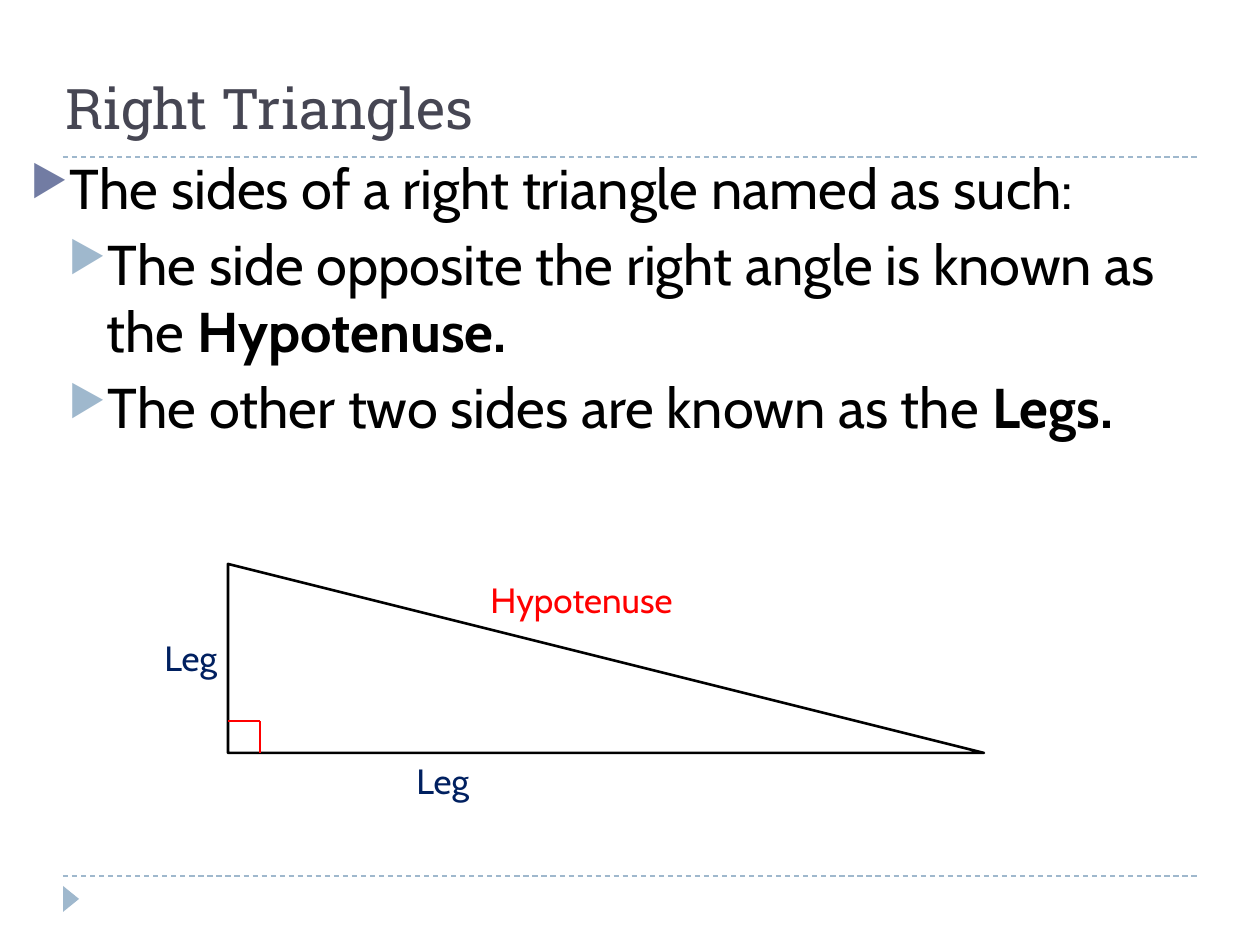
from lxml.etree import SubElement
from pptx import Presentation
from pptx.dml.color import RGBColor
from pptx.enum.dml import MSO_LINE
from pptx.enum.shapes import MSO_CONNECTOR, MSO_SHAPE
from pptx.enum.text import MSO_ANCHOR
from pptx.oxml.ns import qn
from pptx.util import Emu, Pt

PX = 914400 // 126
COLORS = {
    "title": "464653",
    "text": "000000",
    "main_bullet": "727CA3",
    "accent": "9FB8CD",
    "paper": "FFFFFF",
    "highlight": "FF0000",
    "leg": "002060",
}


def px(*lengths):
    return [Emu(length * PX) for length in lengths]


def rgb(name):
    return RGBColor.from_string(COLORS[name])


class SlideBuilder:
    def __init__(self, slide, heading_font, body_font):
        self.shapes = slide.shapes
        self.heading_font = heading_font
        self.body_font = body_font

    def line(self, start, end, color, dash=None):
        connector = self.shapes.add_connector(
            MSO_CONNECTOR.STRAIGHT, *px(*start, *end))
        connector.line.color.rgb = rgb(color)
        connector.line.width = Pt(0.75)
        if dash:
            connector.line.dash_style = dash
        SubElement(connector._element.spPr, qn("a:effectLst"))

    def shape(self, kind, box, fill, outline=None, rotation=0):
        shape = self.shapes.add_shape(kind, *px(*box))
        shape.shadow.inherit = False
        shape.rotation = rotation
        shape.fill.solid()
        shape.fill.fore_color.rgb = rgb(fill)
        if outline:
            shape.line.color.rgb = rgb(outline)
            shape.line.width = Pt(1.5)
        else:
            shape.line.fill.background()

    def frame(self, box, anchor=MSO_ANCHOR.TOP):
        frame = self.shapes.add_textbox(*px(*box)).text_frame
        frame.word_wrap = True
        frame.vertical_anchor = anchor
        return frame

    def style(self, paragraph, size, color, font=None):
        paragraph.font.name = font or self.body_font
        paragraph.font.size = Pt(size)
        paragraph.font.color.rgb = rgb(color)

    def title(self, text, box):
        paragraph = self.frame(box, MSO_ANCHOR.BOTTOM).paragraphs[0]
        paragraph.text = text
        self.style(paragraph, 32, "title", self.heading_font)

    def label(self, text, box, color):
        paragraph = self.frame(box).paragraphs[0]
        paragraph.text = text
        self.style(paragraph, 20, color)

    def bullets(self, items, box):
        """Each item is its level, its plain text and its bold ending."""
        frame = self.frame(box)
        for index, (level, plain, bold) in enumerate(items):
            paragraph = frame.add_paragraph() if index else frame.paragraphs[0]
            paragraph.level = level
            paragraph.space_before = Pt(6 - level)
            self.style(paragraph, 32, "text")
            paragraph.add_run().text = plain
            if bold:
                ending = paragraph.add_run()
                ending.text = bold
                ending.font.bold = True
            self.bullet(paragraph, "accent" if level else "main_bullet")

    def bullet(self, paragraph, color):
        indent = 38 * PX
        properties = paragraph._p.get_or_add_pPr()
        properties.set("marL", str(indent * (paragraph.level + 1)))
        properties.set("indent", str(-indent))
        marks = [
            SubElement(properties, qn("a:buClr")),
            SubElement(properties, qn("a:buSzPct"), val="76000"),
            SubElement(properties, qn("a:buChar"), char="▶"),
        ]
        SubElement(marks[0], qn("a:srgbClr"), val=COLORS[color])
        defaults = properties.find(qn("a:defRPr"))
        for mark in marks:
            defaults.addprevious(mark)


def main():
    deck = Presentation()
    deck.slide_width, deck.slide_height = px(1260, 945)
    slide = deck.slides.add_slide(deck.slide_layouts[6])
    builder = SlideBuilder(slide, "Roboto Slab", "Cabin")

    for rule_y in (876, 157):
        builder.line((63, rule_y), (1197, rule_y), "accent", MSO_LINE.DASH)
    builder.shape(MSO_SHAPE.ISOSCELES_TRIANGLE, (58, 891, 26, 16),
                  "accent", rotation=90)

    builder.title("Right Triangles", (53, 63, 677, 84))
    builder.bullets([
        (0, "The sides of a right triangle named as such:", ""),
        (1, "The side opposite the right angle is known as the ",
         "Hypotenuse."),
        (1, "The other two sides are known as the ", "Legs."),
    ], (18, 147, 1222, 759))

    left, top, width, height = 228, 564, 756, 189
    builder.shape(MSO_SHAPE.RIGHT_TRIANGLE, (left, top, width, height),
                  "paper", "text")
    base = top + height
    mark = 32
    corner = (left + mark, base - mark)
    builder.line((left, base - mark), corner, "highlight")
    builder.line(corner, (left + mark, base), "highlight")

    builder.label("Hypotenuse", (478, 572, 294, 55), "highlight")
    builder.label("Leg", (404, 753, 126, 55), "leg")
    builder.label("Leg", (152, 630, 92, 55), "leg")

    deck.save("out.pptx")


if __name__ == "__main__":
    main()
